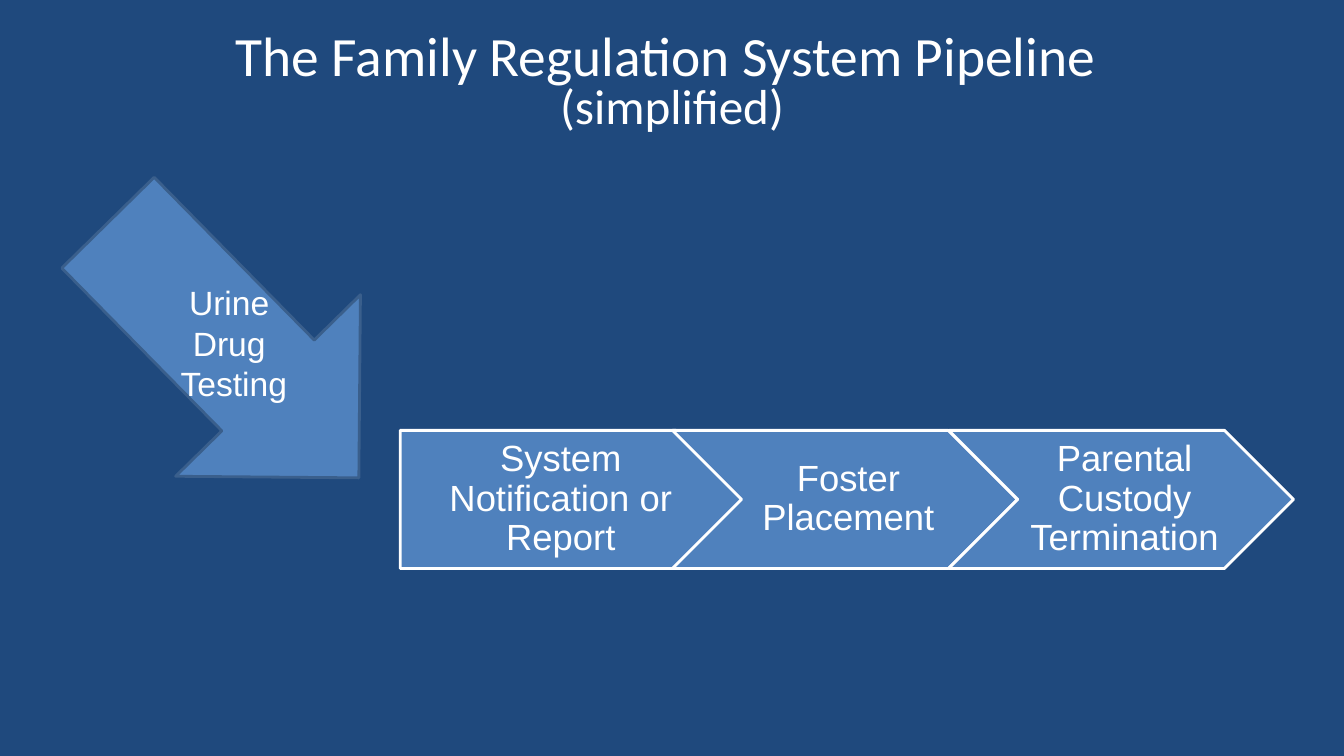
import dataclasses

import pptx
import pptx.dml.color
import pptx.enum.shapes
import pptx.enum.text
import pptx.util

SHAPE = pptx.enum.shapes.MSO_SHAPE
ANCHOR = pptx.enum.text.MSO_ANCHOR
CENTER = pptx.enum.text.PP_ALIGN.CENTER
WIDTH = pptx.util.Inches(13.33)
HEIGHT = pptx.util.Inches(7.5)


@dataclasses.dataclass(frozen=True)
class Theme:
    back: str = "1F497D"
    fill: str = "4F81BD"
    edge: str = "3A5F8C"
    light: str = "FFFFFF"
    head: str = "Calibri"
    body: str = "Arial"
    title: float = 39.6
    sub: float = 35.1
    step: float = 26
    label: float = 24
    line: float = 2


THEME = Theme()


def paint(color, code):
    color.rgb = pptx.dml.color.RGBColor.from_string(code)


def area(left, top, width, height):
    """Turn percentages of the slide into lengths."""
    return (int(WIDTH * left / 100), int(HEIGHT * top / 100),
            int(WIDTH * width / 100), int(HEIGHT * height / 100))


def style(para, face, size, space):
    para.alignment = CENTER
    para.line_spacing = space
    para.font.name = face
    para.font.size = pptx.util.Pt(size)
    paint(para.font.color, THEME.light)


def add_title(slide, main, sub, box):
    title = slide.shapes.title
    title.left, title.top, title.width, title.height = area(*box)
    frame = title.text_frame
    frame.auto_size = pptx.enum.text.MSO_AUTO_SIZE.NONE
    frame.vertical_anchor = ANCHOR.MIDDLE
    para = frame.paragraphs[0]
    style(para, THEME.head, THEME.title, 0.8)
    para.add_run().text = main
    para.add_line_break()
    run = para.add_run()
    run.text = sub
    run.font.size = pptx.util.Pt(THEME.sub)


def add_block(slide, kind, box, edge):
    block = slide.shapes.add_shape(kind, *area(*box))
    block.shadow.inherit = False
    block.fill.solid()
    paint(block.fill.fore_color, THEME.fill)
    paint(block.line.color, edge)
    block.line.width = pptx.util.Pt(THEME.line)
    return block


def add_step(slide, kind, text, box, inset):
    frame = add_block(slide, kind, box, THEME.light).text_frame
    frame.word_wrap = True
    frame.vertical_anchor = ANCHOR.MIDDLE
    frame.margin_left = pptx.util.Inches(inset)
    frame.margin_right = pptx.util.Inches(0.04)
    frame.margin_top = frame.margin_bottom = pptx.util.Inches(0.08)
    frame.text = text
    style(frame.paragraphs[0], THEME.body, THEME.step, 0.9)


def add_label(slide, text, box):
    frame = slide.shapes.add_textbox(*area(*box)).text_frame
    frame.word_wrap = True
    frame.text = text
    for para in frame.paragraphs:
        style(para, THEME.body, THEME.label, 1.0)


def main():
    deck = pptx.Presentation()
    deck.slide_width, deck.slide_height = WIDTH, HEIGHT
    slide = deck.slides.add_slide(deck.slide_layouts.get_by_name("Title Only"))
    slide.background.fill.solid()
    paint(slide.background.fill.fore_color, THEME.back)

    add_title(slide, "The Family Regulation System Pipeline ",
              "(simplified)", (5, 3.33, 90, 15.6))
    arrow = add_block(slide, SHAPE.DOWN_ARROW,
                      (7.73, 22.67, 19.28, 47.33), THEME.edge)
    arrow.rotation = 315.5
    add_label(slide, "Urine \nDrug \nTesting", (10.2, 36.67, 14.4, 17.47))

    steps = (
        (SHAPE.PENTAGON, "System Notification or Report", 29.78, 0.15),
        (SHAPE.CHEVRON, "Foster Placement", 50.04, 0.11),
        (SHAPE.CHEVRON, "Parental Custody Termination", 70.59, 0.11),
    )
    for kind, text, left, inset in steps:
        add_step(slide, kind, text, (left, 56.93, 25.66, 18.27), inset)

    deck.save("out.pptx")


if __name__ == "__main__":
    main()
